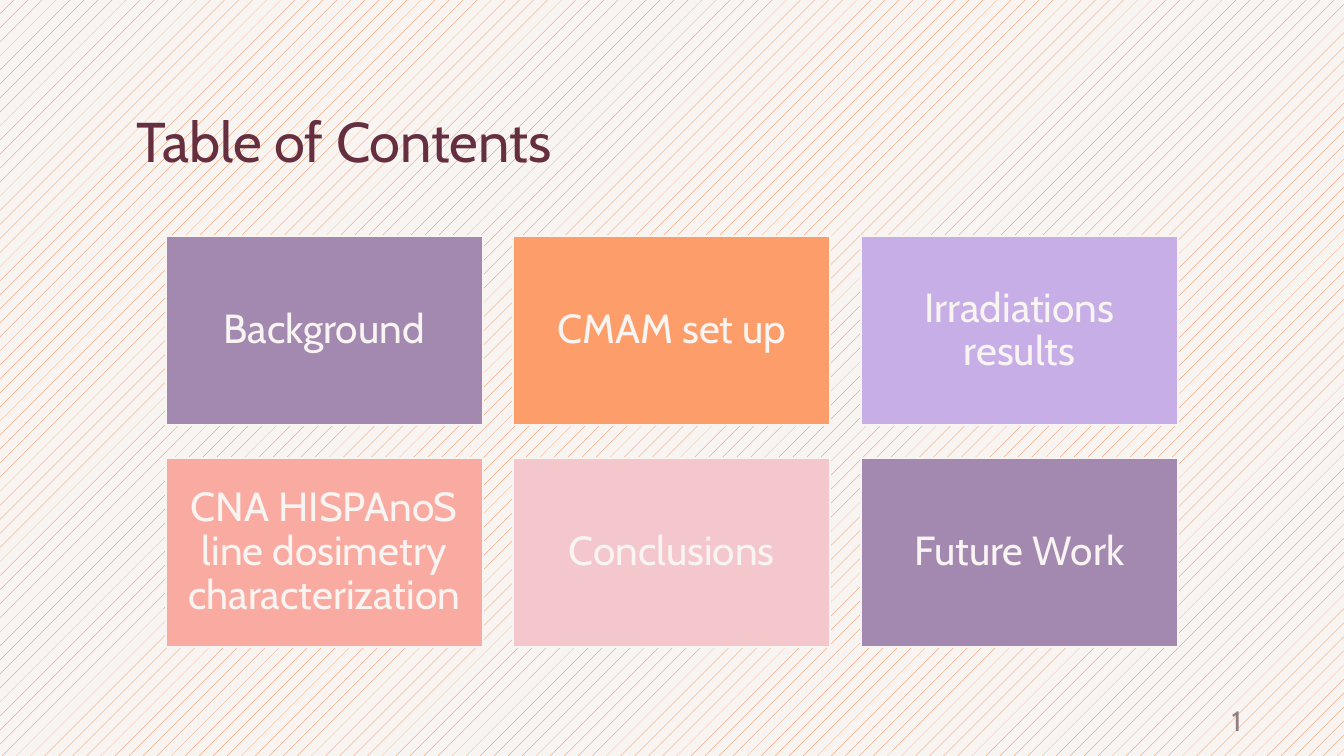
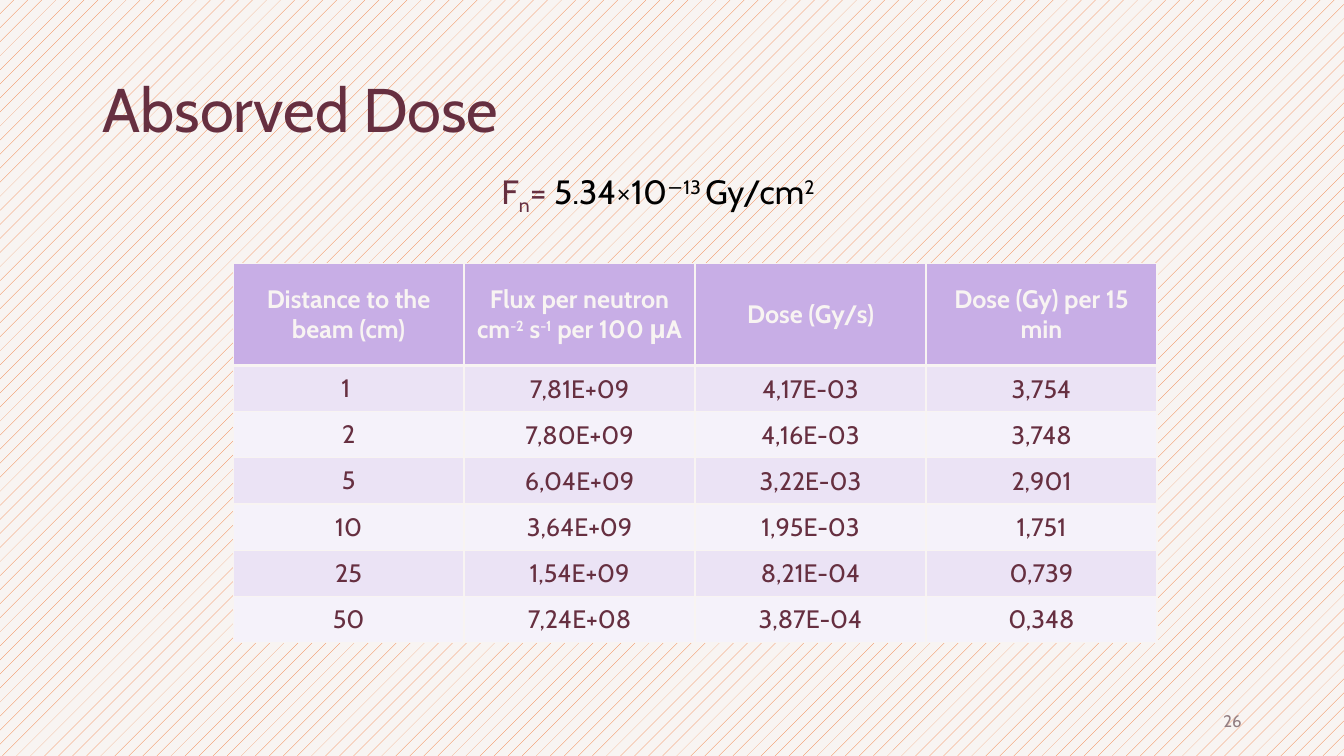
"""Build a contents slide and an absorbed dose slide."""
from lxml import etree
from pptx import Presentation
from pptx import util as u
from pptx.dml.color import RGBColor
from pptx.enum import dml, shapes, text
from pptx.oxml.ns import qn

PX = 9525
FONT = "Cabin"
CREAM = RGBColor(0xF8, 0xF4, 0xF2)
HATCH = RGBColor(0xF0, 0x72, 0x2E)
WINE = RGBColor(0x66, 0x2F, 0x40)
GREY = RGBColor(0x93, 0x7E, 0x82)
BLACK = RGBColor(0, 0, 0)
PLUM = RGBColor(0xA3, 0x89, 0xAF)
ORANGE = RGBColor(0xFC, 0x9D, 0x6A)
LILAC = RGBColor(0xC8, 0xAE, 0xE6)
CORAL = RGBColor(0xFA, 0xAB, 0xA1)
PINK = RGBColor(0xF4, 0xC7, 0xCC)
BANDS = [RGBColor(0xEB, 0xE3, 0xF5), RGBColor(0xF5, 0xF2, 0xFA)]

LEFT, MID, RIGHT = text.PP_ALIGN.LEFT, text.PP_ALIGN.CENTER, text.PP_ALIGN.RIGHT
TOP, CENTER = text.MSO_ANCHOR.TOP, text.MSO_ANCHOR.MIDDLE

CARDS = [
    ("Background", PLUM), ("CMAM set up", ORANGE), ("Irradiations results", LILAC),
    ("CNA HISPAnoS line dosimetry characterization", CORAL),
    ("Conclusions", PINK), ("Future Work", PLUM),
]
HEADS = [
    [("Distance to the beam (cm)",)],
    [("Flux per neutron cm",), ("-2", 30), (" s",), ("-1", 30), (" per 100 μA",)],
    [("Dose (Gy/s)",)],
    [("Dose (Gy) per 15 min",)],
]
ROWS = [
    ("1 ", "7,81E+09", "4,17E-03", "3,754"),
    ("2", "7,80E+09", "4,16E-03", "3,748"),
    ("5", "6,04E+09", "3,22E-03", "2,901"),
    ("10", "3,64E+09", "1,95E-03", "1,751"),
    ("25", "1,54E+09", "8,21E-04", "0,739"),
    ("50", "7,24E+08", "3,87E-04", "0,348"),
]
FORMULA = [
    ("F",), ("n", -25), ("= ",), ("5.34×10", 0, BLACK), ("−13 ", 30, BLACK),
    ("Gy/cm", 0, BLACK), ("2", 30, BLACK),
]


def px(*vals):
    """Turn pixel lengths into EMU."""
    return [u.Emu(v * PX) for v in vals]


def write(frame, runs, size, color, align=LEFT, lead=None, bold=False):
    """Write runs of (text, baseline, colour) into the first paragraph."""
    para = frame.paragraphs[0]
    para.alignment = align
    para.line_spacing = lead
    for words, base, tint in ((*r, 0, None)[:3] if len(r) < 3 else r for r in runs):
        run = para.add_run()
        run.text = words
        run.font.name = FONT
        run.font.size = u.Pt(size)
        run.font.bold = bold
        run.font.color.rgb = tint or color
        if base:
            run._r.get_or_add_rPr().set("baseline", str(base * 1000))


def add_slide(deck, name, box, size, anchor, num, numsize):
    """Add a slide with its title and page number."""
    slide = deck.slides.add_slide(deck.slide_layouts[5])
    title = slide.shapes.title
    title.left, title.top, title.width, title.height = px(*box)
    frame = title.text_frame
    frame.auto_size = text.MSO_AUTO_SIZE.NONE
    frame.vertical_anchor = anchor
    write(frame, [(name,)], size, WINE, lead=0.9)
    page = slide.shapes.add_textbox(*px(904, 667, 288, 38)).text_frame
    page.word_wrap = True
    page.vertical_anchor = CENTER
    write(page, [(num,)], numsize, GREY, RIGHT)
    return slide


def add_card(slide, box, label, color):
    """Add a filled card with a centred label."""
    card = slide.shapes.add_shape(shapes.MSO_SHAPE.RECTANGLE, *px(*box))
    card.shadow.inherit = False
    card.fill.solid()
    card.fill.fore_color.rgb = color
    card.line.color.rgb = CREAM
    card.line.width = u.Pt(1.5)
    frame = card.text_frame
    frame.word_wrap = True
    frame.vertical_anchor = CENTER
    frame.margin_left, frame.margin_top, frame.margin_right, frame.margin_bottom = px(11, 11, 11, 11)
    write(frame, [(label,)], 29, CREAM, MID, 0.9)


def edge(cell, **widths):
    """Draw the cell borders, given in points by side."""
    props = cell._tc.get_or_add_tcPr()
    for spot, side in enumerate("LRTB"):
        line = etree.Element(qn("a:ln" + side), w=str(u.Pt(widths.get(side, 1))))
        fill = etree.SubElement(line, qn("a:solidFill"))
        etree.SubElement(fill, qn("a:srgbClr"), val=str(CREAM))
        props.insert(spot, line)


def set_cell(cell, runs, color, ink, bold=False):
    """Fill a table cell and write its text."""
    cell.fill.solid()
    cell.fill.fore_color.rgb = color
    cell.vertical_anchor = CENTER
    write(cell.text_frame, runs, 18, ink, MID, bold=bold)


def add_grid(slide):
    """Add the dose table."""
    grid = slide.shapes.add_table(len(ROWS) + 1, len(HEADS), *px(222, 251, 880, 361)).table
    grid.horz_banding = False
    for col in grid.columns:
        col.width = px(220)[0]
    for i, row in enumerate(grid.rows):
        row.height = px(44 if i else 97)[0]
    for j, runs in enumerate(HEADS):
        head = grid.cell(0, j)
        set_cell(head, runs, LILAC, CREAM, True)
        edge(head, B=3)
    for i, vals in enumerate(ROWS):
        for j, val in enumerate(vals):
            cell = grid.cell(i + 1, j)
            set_cell(cell, [(val,)], BANDS[i % 2], WINE)
            edge(cell, T=1 if i else 3)
            if j:
                cell.margin_left, cell.margin_top, cell.margin_right, cell.margin_bottom = px(1, 1, 1, 0)


def add_formula(slide):
    """Add the conversion factor line."""
    frame = slide.shapes.add_textbox(*px(468, 158, 322, 48)).text_frame
    frame.word_wrap = False
    frame.auto_size = text.MSO_AUTO_SIZE.SHAPE_TO_FIT_TEXT
    write(frame, FORMULA, 24, WINE)


def main():
    """Build and save the deck."""
    deck = Presentation()
    deck.slide_width, deck.slide_height = px(1280, 720)
    back = deck.slide_master.background.fill
    back.patterned()
    back.pattern = dml.MSO_PATTERN.PERCENT_5
    back.fore_color.rgb = HATCH
    back.back_color.rgb = CREAM

    slide = add_slide(deck, "Table of Contents", (120, 104, 1040, 72), 40, TOP, "1", 20)
    for i, (label, color) in enumerate(CARDS):
        row, col = divmod(i, 3)
        add_card(slide, (158 + 331 * col, 225 + 211 * row, 302, 180), label, color)

    slide = add_slide(deck, "Absorved Dose", (88, 38, 1104, 139), 44, CENTER, "26", 12)
    add_grid(slide)
    add_formula(slide)
    deck.save("out.pptx")


if __name__ == "__main__":
    main()
